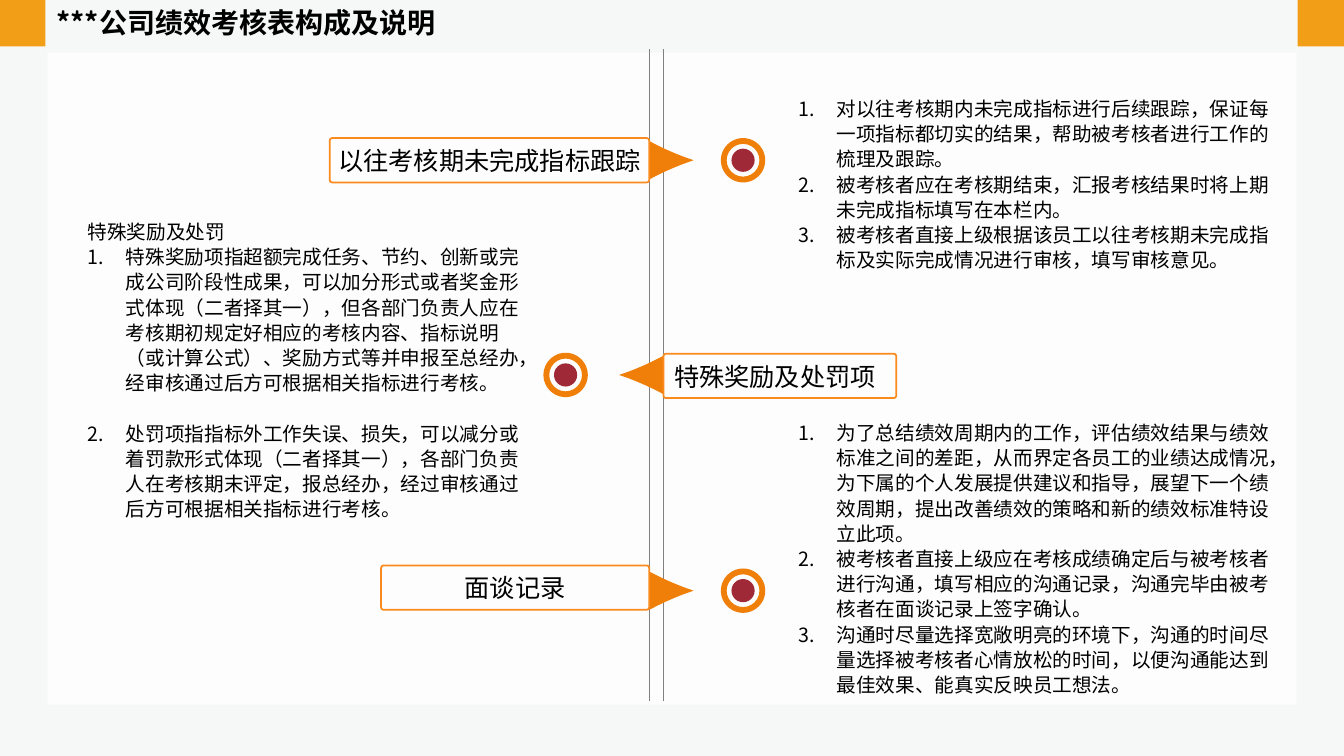
"""Build the slide explaining how the performance review form is made up."""
import pptx
import pptx.util
import pptx.enum.shapes
import pptx.enum.text
import pptx.oxml.ns
import pptx.dml.color
from lxml import etree

Inches, Pt = pptx.util.Inches, pptx.util.Pt
SHAPE = pptx.enum.shapes.MSO_SHAPE
ALIGN = pptx.enum.text.PP_ALIGN
MIDDLE = pptx.enum.text.MSO_ANCHOR.MIDDLE
qn = pptx.oxml.ns.qn
FONT = "Noto Sans CJK SC"
COLORS = {"background": "F6F8F7", "panel": "FFFFFF", "corner": "F29E17", "spine": "808080",
          "marker": "F07F09", "core": "9F2936", "border": "FA8A1E", "text": "000000"}
COLORS = {part: pptx.dml.color.RGBColor.from_string(code) for part, code in COLORS.items()}


def paint(shape, color):
    shape.shadow.inherit = False
    shape.fill.solid()
    shape.fill.fore_color.rgb = COLORS[color]
    shape.line.fill.background()


def write(frame, text, size, bold=False):
    frame.text = text
    for paragraph in frame.paragraphs:
        for run in paragraph.runs:
            run.font.name = FONT
            run.font.size = Pt(size)
            run.font.bold = bold
            run.font.color.rgb = COLORS["text"]
            etree.SubElement(run.font._element, qn("a:ea"), typeface=FONT)


deck = pptx.Presentation()
deck.slide_width, deck.slide_height = Inches(13.33), Inches(7.5)
slide = deck.slides.add_slide(deck.slide_layouts[5])
slide.background.fill.solid()
slide.background.fill.fore_color.rgb = COLORS["background"]
shapes = slide.shapes

title = shapes.title
title.left, title.top, title.width, title.height = map(Inches, (0.46, 0, 6.25, 0.44))
write(title.text_frame, "***公司绩效考核表构成及说明", 20, bold=True)
title.text_frame.auto_size = pptx.enum.text.MSO_AUTO_SIZE.NONE
title.text_frame.vertical_anchor = MIDDLE
title.text_frame.paragraphs[0].alignment = ALIGN.LEFT

panel = shapes.add_shape(SHAPE.RECTANGLE, Inches(0.47), Inches(0.52), Inches(12.39), Inches(6.47))
paint(panel, "panel")
panel_color = panel._element.spPr.find(qn("a:solidFill"))[0]
etree.SubElement(panel_color, qn("a:alpha"), val="81000")

for left in (-0.01, 12.87):
    corner = shapes.add_shape(SHAPE.RECTANGLE, Inches(left), 0, Inches(0.46), Inches(0.46))
    paint(corner, "corner")

for x in (6.44, 6.58):
    spine = shapes.add_connector(pptx.enum.shapes.MSO_CONNECTOR.STRAIGHT,
                                 Inches(x), Inches(0.49), Inches(x), Inches(6.95))
    spine.line.color.rgb = COLORS["spine"]
    spine.line.width = Pt(0.5)
    etree.SubElement(spine._element.spPr, qn("a:effectLst"))

sections = [
    {"label": "以往考核期未完成指标跟踪", "label_box": (3.27, 1.37, 3.17, 0.44), "align": ALIGN.CENTER,
     "center": 1.59, "base": 6.44, "direction": 1, "target": 7.37, "notes_box": (7.82, 0.65, 4.88, 2.34),
     "heading": [], "gap": 0, "notes": [
         "对以往考核期内未完成指标进行后续跟踪，保证每一项指标都切实的结果，帮助被考核者进行工作的梳理及跟踪。",
         "被考核者应在考核期结束，汇报考核结果时将上期未完成指标填写在本栏内。",
         "被考核者直接上级根据该员工以往考核期未完成指标及实际完成情况进行审核，填写审核意见。"]},
    {"label": "特殊奖励及处罚项", "label_box": (6.58, 3.51, 2.31, 0.44), "align": ALIGN.LEFT,
     "center": 3.72, "base": 6.58, "direction": -1, "target": 5.61, "notes_box": (0.77, 2.19, 4.48, 2.95),
     "heading": ["特殊奖励及处罚"], "gap": 18, "notes": [
         "特殊奖励项指超额完成任务、节约、创新或完成公司阶段性成果，可以加分形式或者奖金形式体现（二者择其一），"
         "但各部门负责人应在考核期初规定好相应的考核内容、指标说明（或计算公式）、奖励方式等并申报至总经办，"
         "经审核通过后方可根据相关指标进行考核。",
         "处罚项指指标外工作失误、损失，可以减分或着罚款形式体现（二者择其一），各部门负责人在考核期末评定，"
         "报总经办，经过审核通过后方可根据相关指标进行考核。"]},
    {"label": "面谈记录", "label_box": (3.78, 5.61, 2.66, 0.44), "align": ALIGN.CENTER,
     "center": 5.86, "base": 6.44, "direction": 1, "target": 7.37, "notes_box": (7.82, 4.12, 5.03, 2.83),
     "heading": [], "gap": 0, "notes": [
         "为了总结绩效周期内的工作，评估绩效结果与绩效标准之间的差距，从而界定各员工的业绩达成情况，"
         "为下属的个人发展提供建议和指导，展望下一个绩效周期，提出改善绩效的策略和新的绩效标准特设立此项。",
         "被考核者直接上级应在考核成绩确定后与被考核者进行沟通，填写相应的沟通记录，"
         "沟通完毕由被考核者在面谈记录上签字确认。",
         "沟通时尽量选择宽敞明亮的环境下，沟通的时间尽量选择被考核者心情放松的时间，"
         "以便沟通能达到最佳效果、能真实反映员工想法。"]},
]

edge = [(0, 0.19)]
for step in range(9):
    t = step / 8
    weights = ((1 - t) ** 3, 3 * t * (1 - t) ** 2, 3 * t * t * (1 - t), t ** 3)
    edge.append((sum(w * x for w, x in zip(weights, (0.02, 0.15, 0.29, 0.44))),
                 sum(w * y for w, y in zip(weights, (0.18, 0.11, 0.05, 0)))))
outline = edge + [(x, -y) for x, y in reversed(edge[:-1])]

for section in sections:
    center = section["center"]
    points = [(Inches(section["base"] + section["direction"] * x), Inches(center + y)) for x, y in outline]
    builder = shapes.build_freeform(*points[0])
    builder.add_line_segments(points[1:])
    paint(builder.convert_to_shape(), "marker")

    for kind, size, color in ((SHAPE.DONUT, 0.44, "marker"), (SHAPE.OVAL, 0.23, "core")):
        target = shapes.add_shape(kind, Inches(section["target"] - size / 2), Inches(center - size / 2),
                                  Inches(size), Inches(size))
        paint(target, color)
        if kind == SHAPE.DONUT:
            target.adjustments[0] = 0.131

    notes = shapes.add_textbox(*map(Inches, section["notes_box"])).text_frame
    notes.word_wrap = True
    notes.vertical_anchor = MIDDLE
    write(notes, "\n".join(section["heading"] + section["notes"]), 14)
    for paragraph in notes.paragraphs:
        paragraph.line_spacing = Pt(18)
    items = notes.paragraphs[len(section["heading"]):]
    items[0].space_after = Pt(section["gap"])
    for item in items:
        properties = item._p.get_or_add_pPr()
        properties.set("marL", str(Inches(0.38)))
        properties.set("indent", str(Inches(-0.38)))
        etree.SubElement(properties, qn("a:buFont"), typeface="+mj-lt")
        etree.SubElement(properties, qn("a:buAutoNum"), type="arabicPeriod")

    label = shapes.add_shape(SHAPE.ROUNDED_RECTANGLE, *map(Inches, section["label_box"]))
    label.adjustments[0] = 0.06
    label.shadow.inherit = False
    label.fill.background()
    label.line.color.rgb = COLORS["border"]
    label.line.width = Pt(1.25)
    label.text_frame.word_wrap = False
    label.text_frame.vertical_anchor = MIDDLE
    write(label.text_frame, section["label"], 18)
    label.text_frame.paragraphs[0].alignment = section["align"]

deck.save("out.pptx")
